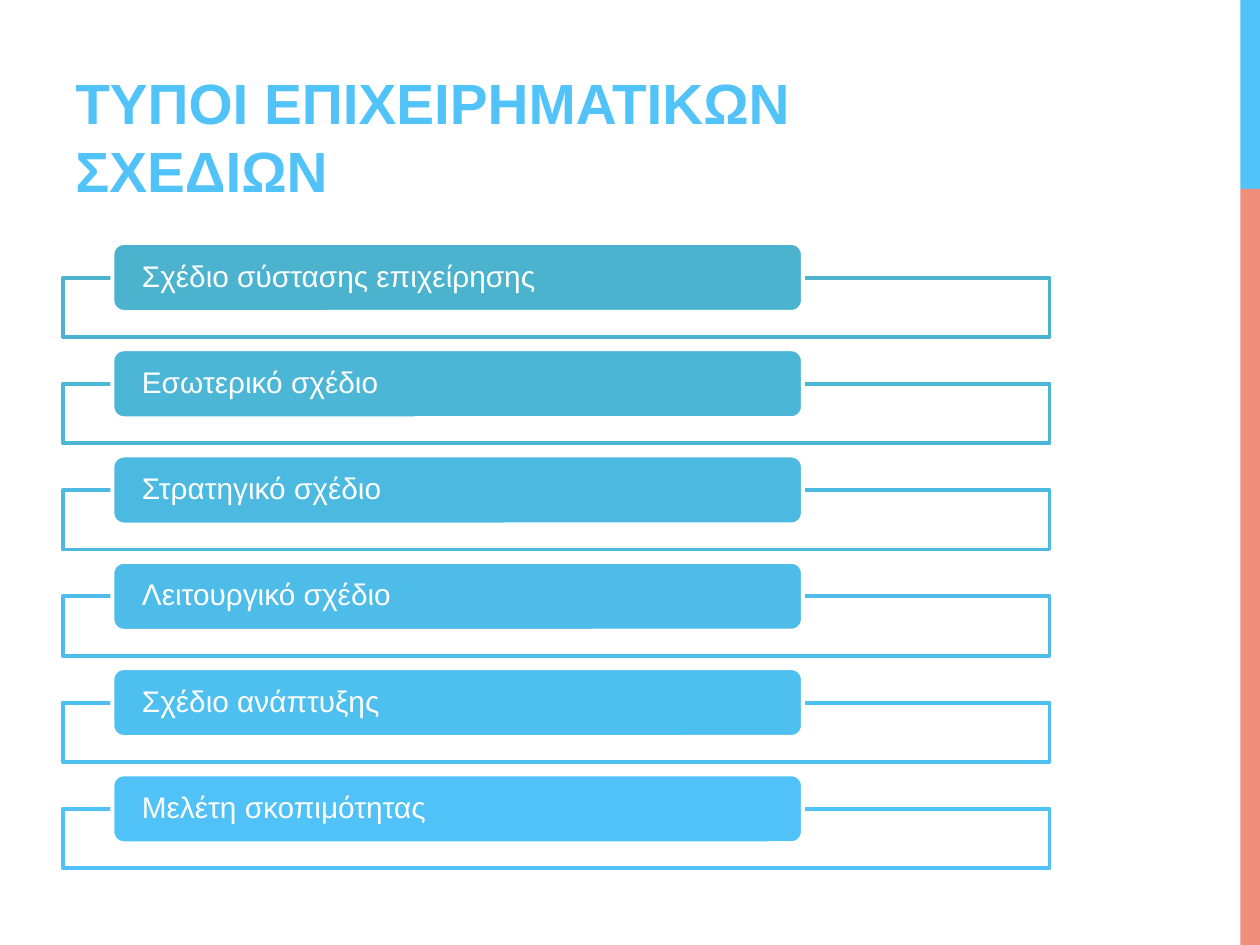
import pptx
import pptx.util
import pptx.dml.color
import pptx.enum.shapes
import pptx.enum.text
import lxml.etree

Pt = pptx.util.Pt
SHAPES = pptx.enum.shapes.MSO_SHAPE
ANCHOR = pptx.enum.text.MSO_ANCHOR


def paint(color_owner, color):
    color_owner.solid()
    color_owner.fore_color.rgb = pptx.dml.color.RGBColor.from_string(color)


def write(shape, text, size, color, bold=False, anchor=ANCHOR.MIDDLE, margins=(0, 0), line_spacing=1.0):
    frame = shape.text_frame
    frame.word_wrap = True
    frame.vertical_anchor = anchor
    frame.margin_left = frame.margin_right = Pt(margins[0])
    frame.margin_top = frame.margin_bottom = Pt(margins[1])
    paragraph = frame.paragraphs[0]
    paragraph.alignment = pptx.enum.text.PP_ALIGN.LEFT
    paragraph.line_spacing = line_spacing
    run = paragraph.add_run()
    run.text = text
    run.font.name = "Arial"
    run.font.size = Pt(size)
    run.font.bold = bold
    paint(run.font.fill, color)


presentation = pptx.Presentation()
presentation.slide_width = Pt(720)
presentation.slide_height = Pt(540)
slide = presentation.slides.add_slide(presentation.slide_layouts[6])

for top, height, color in [(0, 108, "51C3F9"), (108, 432, "EF8E7B")]:
    band = slide.shapes.add_shape(SHAPES.RECTANGLE, Pt(708.75), Pt(top), Pt(11.25), Pt(height))
    band.shadow.inherit = False
    paint(band.fill, color)
    band.line.fill.background()

title = slide.shapes.add_textbox(Pt(36), Pt(12.25), Pt(545), Pt(108))
write(title, "ΤΥΠΟΙ ΕΠΙΧΕΙΡΗΜΑΤΙΚΩΝ ΣΧΕΔΙΩΝ", size=32.4, color="51C3F9", bold=True,
      anchor=ANCHOR.BOTTOM, margins=(7.2, 3.6), line_spacing=Pt(38.8))

plans = [
    ("Σχέδιο σύστασης επιχείρησης", "4CB3CE"),
    ("Εσωτερικό σχέδιο", "4CB6D7"),
    ("Στρατηγικό σχέδιο", "4CB9E0"),
    ("Λειτουργικό σχέδιο", "4DBCE8"),
    ("Σχέδιο ανάπτυξης", "4EC0F0"),
    ("Μελέτη σκοπιμότητας", "50C2F7"),
]
for index, (plan, color) in enumerate(plans):
    top = 138.9 + 60.72 * index

    frame_box = slide.shapes.add_shape(SHAPES.RECTANGLE, Pt(36), Pt(top + 19.7), Pt(563.75), Pt(34))
    label = slide.shapes.add_shape(SHAPES.ROUNDED_RECTANGLE, Pt(64.2), Pt(top), Pt(394.6), Pt(39.4))
    label.adjustments[0] = 0.167
    for shape, fill, line in [(frame_box, "FFFFFF", color), (label, color, "FFFFFF")]:
        shape.shadow.inherit = False
        paint(shape.fill, fill)
        paint(shape.line.fill, line)
        shape.line.width = Pt(2.25)

    namespace = "{http://schemas.openxmlformats.org/drawingml/2006/main}"
    fill_color = frame_box._element.spPr.find(f"{namespace}solidFill/{namespace}srgbClr")
    lxml.etree.SubElement(fill_color, f"{namespace}alpha", val="90000")

    write(label, plan, size=17, color="FFFFFF", margins=(15, 0), line_spacing=0.9)

presentation.save("out.pptx")
